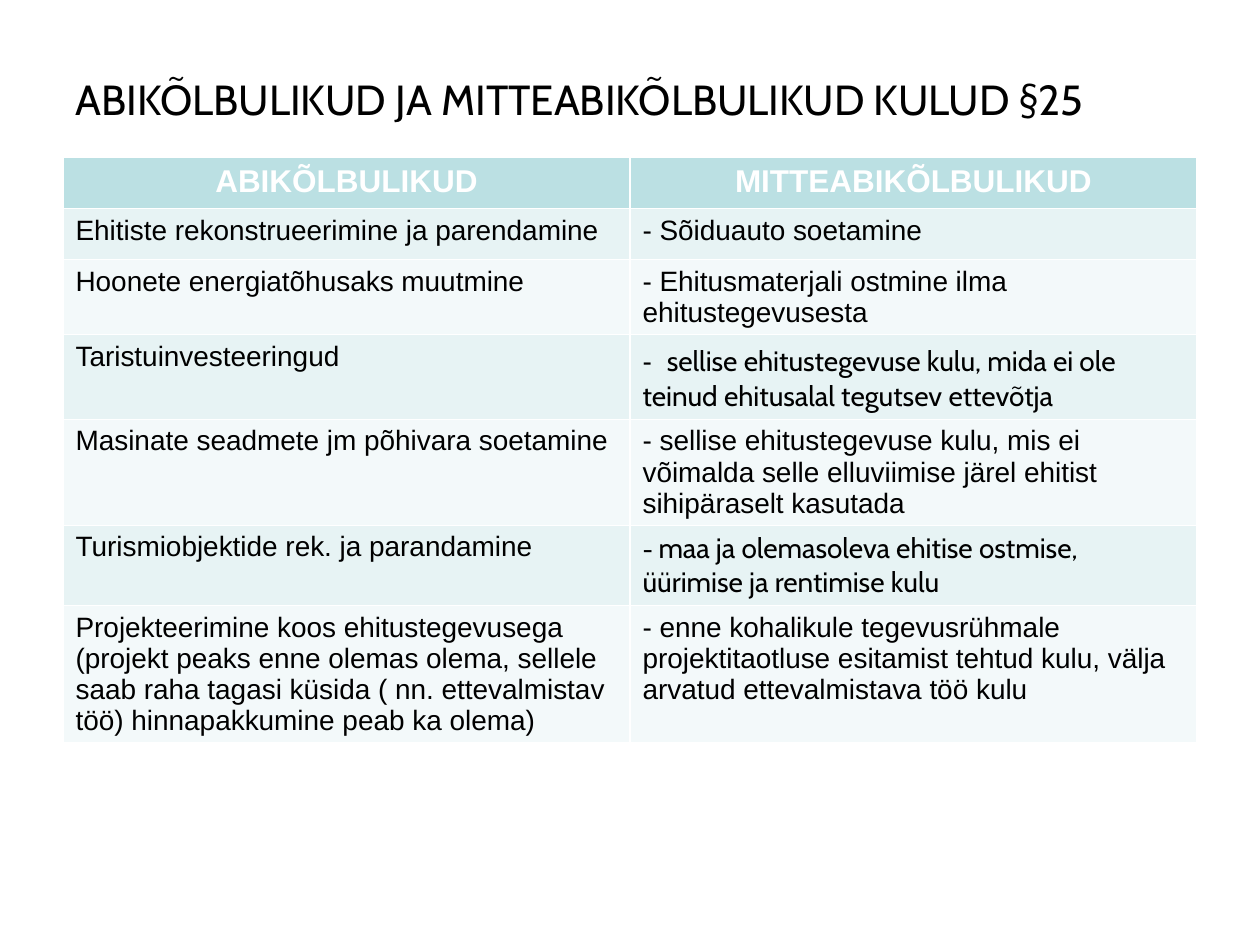
import dataclasses

import pptx
import pptx.dml.color
import pptx.enum.text
import pptx.util


@dataclasses.dataclass(frozen=True)
class Theme:
    sans: str = "Arial"
    display: str = "Cabin"
    ink: str = "000000"
    paper: str = "FFFFFF"
    header: str = "BBE0E3"
    bands: tuple = ("E7F3F4", "F3F9FA")
    title_size: int = 24
    header_size: int = 18
    body_size: int = 16
    space_size: int = 18
    dash_size: int = 14


def color(value):
    return pptx.dml.color.RGBColor.from_string(value)


class PageBuilder:
    def __init__(self, theme, page):
        self.theme = theme
        self.page = page

    def span(self, para, text, size, face, ink, bold=False):
        span = para.add_run()
        span.text = text
        span.font.size = pptx.util.Pt(size)
        span.font.name = face
        span.font.bold = bold
        span.font.color.rgb = color(ink)

    def title(self, text, left, top, width, height):
        box = self.page.shapes.title
        box.left, box.top = pptx.util.Pt(left), pptx.util.Pt(top)
        box.width, box.height = pptx.util.Pt(width), pptx.util.Pt(height)
        box.text_frame.vertical_anchor = pptx.enum.text.MSO_ANCHOR.MIDDLE
        para = box.text_frame.paragraphs[0]
        para.alignment = pptx.enum.text.PP_ALIGN.LEFT
        self.span(para, text, self.theme.title_size, self.theme.display, self.theme.ink)

    def cell(self, cell, fill):
        cell.fill.solid()
        cell.fill.fore_color.rgb = color(fill)
        return cell.text_frame.paragraphs[0]

    def table(self, headings, rows, left, top, width, row_height):
        theme = self.theme
        count = len(rows) + 1
        table = self.page.shapes.add_table(
            count, len(headings), pptx.util.Pt(left), pptx.util.Pt(top),
            pptx.util.Pt(width), pptx.util.Pt(row_height * count)).table
        for column, heading in enumerate(headings):
            para = self.cell(table.cell(0, column), theme.header)
            para.alignment = pptx.enum.text.PP_ALIGN.CENTER
            self.span(para, heading, theme.header_size, theme.sans, theme.paper, True)
        for index, row in enumerate(rows):
            fill = theme.bands[index % len(theme.bands)]
            for column, content in enumerate(row):
                para = self.cell(table.cell(index + 1, column), fill)
                if isinstance(content, str):
                    content = [(content, theme.body_size, theme.sans)]
                for text, size, face in content:
                    self.span(para, text, size, face, theme.ink)


def main():
    theme = Theme()
    deck = pptx.Presentation()
    deck.slide_width, deck.slide_height = pptx.util.Pt(720), pptx.util.Pt(540)
    builder = PageBuilder(theme, deck.slides.add_slide(deck.slide_layouts[5]))

    builder.title("ABIKÕLBULIKUD JA MITTEABIKÕLBULIKUD KULUD §25", 36, 26, 684, 61)

    unqualified_builder = [
        ("- ", theme.body_size, theme.sans),
        (" ", theme.space_size, theme.display),
        ("sellise ehitustegevuse kulu, mida ei ole teinud ehitusalal tegutsev ettevõtja",
         theme.body_size, theme.display),
    ]
    land_costs = [
        ("- ", theme.dash_size, theme.display),
        ("maa ja olemasoleva ehitise ostmise, üürimise ja rentimise kulu",
         theme.body_size, theme.display),
    ]
    rows = [
        ("Ehitiste rekonstrueerimine ja parendamine", "- Sõiduauto soetamine"),
        ("Hoonete energiatõhusaks muutmine",
         "- Ehitusmaterjali ostmine ilma ehitustegevusesta"),
        ("Taristuinvesteeringud", unqualified_builder),
        ("Masinate seadmete jm põhivara soetamine",
         "- sellise ehitustegevuse kulu, mis ei võimalda selle elluviimise järel "
         "ehitist sihipäraselt kasutada"),
        ("Turismiobjektide rek. ja parandamine", land_costs),
        ("Projekteerimine koos ehitustegevusega (projekt peaks enne olemas olema, "
         "sellele saab raha tagasi küsida ( nn. ettevalmistav töö) "
         "hinnapakkumine peab ka olema)",
         "- enne kohalikule tegevusrühmale projektitaotluse esitamist tehtud kulu, "
         "välja arvatud ettevalmistava töö kulu"),
    ]
    builder.table(("ABIKÕLBULIKUD", "MITTEABIKÕLBULIKUD"), rows, 36, 90, 648, 29.2)

    deck.save("out.pptx")


if __name__ == "__main__":
    main()
